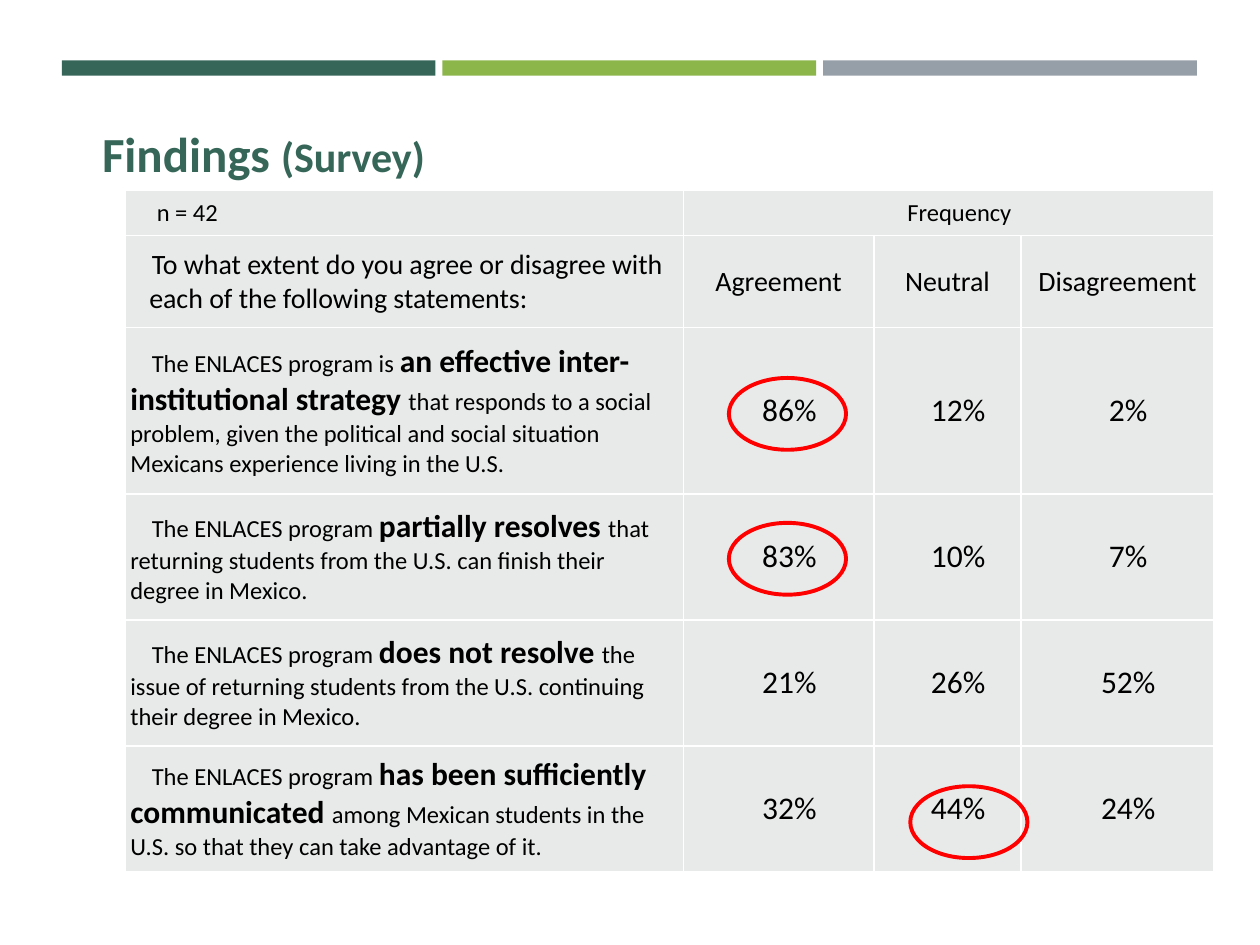
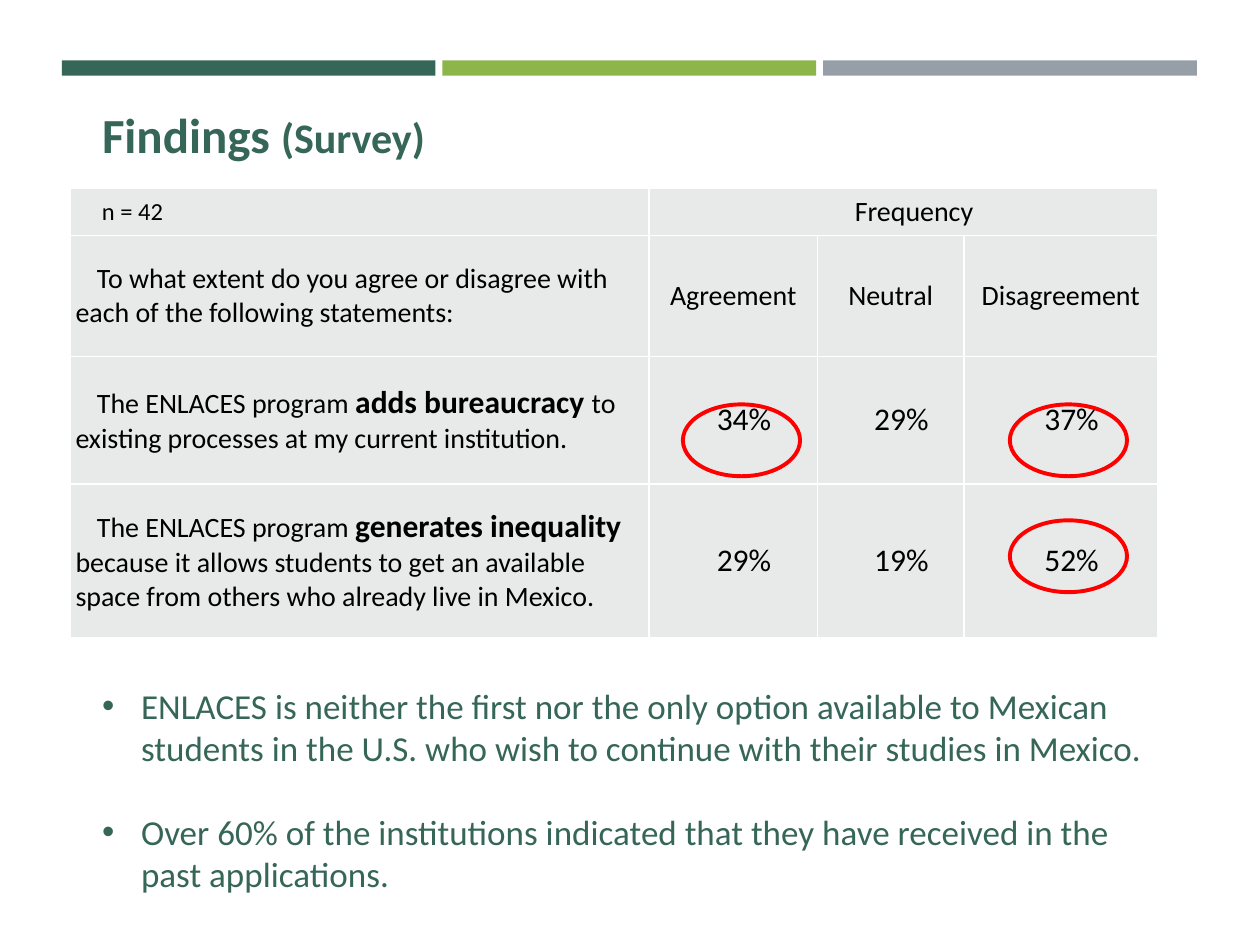
from dataclasses import dataclass

from lxml.etree import SubElement
from pptx import Presentation
from pptx.dml.color import RGBColor
from pptx.enum.shapes import MSO_SHAPE
from pptx.enum.text import MSO_ANCHOR, MSO_AUTO_SIZE, PP_ALIGN
from pptx.oxml.ns import qn
from pptx.util import Inches, Pt

GREEN = RGBColor(0x36, 0x66, 0x58)
LIME = RGBColor(0x8C, 0xB6, 0x4A)
SLATE = RGBColor(0x96, 0x9F, 0xA7)
CELL_GREY = RGBColor(0xE8, 0xEA, 0xEA)
BLACK = RGBColor(0, 0, 0)
WHITE = RGBColor(0xFF, 0xFF, 0xFF)
RED = RGBColor(0xFF, 0, 0)
FONT = "Calibri"

# The slide is a grid of 100 columns by 75 rows of square units
COLUMNS, ROWS = 100, 75
FIRST_INDENT = 1.7
MARK_WIDTH, MARK_HEIGHT = 9.3, 5.7

QUESTION = "To what extent do you agree or disagree with each of the following statements:"
ANSWERS = ["Agreement", "Neutral", "Disagreement"]


@dataclass
class Box:
    left: float
    top: float
    width: float
    height: float


@dataclass
class Survey:
    left: float
    top: float
    widths: list
    heights: list
    frequency_size: int
    question_indent: tuple  # left margin, first line
    statement_size: int
    statements: list  # lead, emphasis, rest, percentages
    marks: list  # row, column, shift right, shift down


def units(count):
    return Inches(count / 10)


def place(shape, box):
    shape.left, shape.top = units(box.left), units(box.top)
    shape.width, shape.height = units(box.width), units(box.height)


def add_run(paragraph, text, size, color=BLACK, bold=False):
    run = paragraph.add_run()
    run.text = text
    run.font.name = FONT
    run.font.size = Pt(size)
    run.font.bold = bold
    run.font.color.rgb = color


def indent(paragraph, margin, first):
    properties = paragraph._p.get_or_add_pPr()
    properties.set("marL", str(units(margin)))
    properties.set("indent", str(units(first)))
    return properties


def add_preset(slide, preset, box):
    shape = slide.shapes.add_shape(
        preset, units(box.left), units(box.top), units(box.width), units(box.height))
    shape.shadow.inherit = False
    return shape


def add_bands(prs, slide, box, gap):
    """Three equal bands, moved to the master so every slide shows them."""
    colors = [GREEN, LIME, SLATE]
    width = (box.width - gap * (len(colors) - 1)) / len(colors)
    for i, color in enumerate(colors):
        band = add_preset(slide, MSO_SHAPE.RECTANGLE,
                          Box(box.left + i * (width + gap), box.top, width, box.height))
        band.fill.solid()
        band.fill.fore_color.rgb = color
        band.line.fill.background()
        prs.slide_master.shapes.element.append(band.element)


def add_title(slide, box):
    title = slide.shapes.title
    place(title, box)
    frame = title.text_frame
    frame.word_wrap = True
    frame.auto_size = MSO_AUTO_SIZE.NONE
    frame.vertical_anchor = MSO_ANCHOR.TOP
    heading = frame.paragraphs[0]
    heading.alignment = PP_ALIGN.LEFT
    heading.line_spacing = Pt(33.6)
    add_run(heading, "Findings ", 28, GREEN, True)
    add_run(heading, "(Survey)", 24, GREEN, True)


def style_cell(cell):
    cell.margin_left = cell.margin_right = units(0.4)
    cell.margin_top = cell.margin_bottom = units(0.4)
    cell.vertical_anchor = MSO_ANCHOR.MIDDLE
    properties = cell._tc.get_or_add_tcPr()
    for side in ("lnL", "lnR", "lnT", "lnB"):
        border = SubElement(properties, qn(f"a:{side}"), w=str(Pt(1)))
        fill = SubElement(border, qn("a:solidFill"))
        SubElement(fill, qn("a:srgbClr"), val=str(WHITE))
    cell.fill.solid()
    cell.fill.fore_color.rgb = CELL_GREY


def write_cell(cell, runs, margin=0, first=FIRST_INDENT, centred=False):
    """Each run is (text, size) or (text, size, bold)."""
    paragraph = cell.text_frame.paragraphs[0]
    indent(paragraph, margin, first)
    paragraph.alignment = PP_ALIGN.CENTER if centred else PP_ALIGN.LEFT
    for text, size, *bold in runs:
        add_run(paragraph, text, size, bold=any(bold))


def add_survey(slide, survey):
    box = Box(survey.left, survey.top, sum(survey.widths), sum(survey.heights))
    table = slide.shapes.add_table(
        len(survey.heights), len(survey.widths), units(box.left), units(box.top),
        units(box.width), units(box.height)).table
    table.first_row = table.horz_banding = False
    for column, width in zip(table.columns, survey.widths):
        column.width = units(width)
    for row, height in zip(table.rows, survey.heights):
        row.height = units(height)
    for cell in table.iter_cells():
        style_cell(cell)

    # Sample size and answer headings
    table.cell(0, 1).merge(table.cell(0, 3))
    write_cell(table.cell(0, 0), [("n = 42", 14)], first=2.1)
    write_cell(table.cell(0, 1), [("Frequency", survey.frequency_size)], centred=True)
    write_cell(table.cell(1, 0), [(QUESTION, 16)], *survey.question_indent)
    for column, answer in enumerate(ANSWERS, 1):
        write_cell(table.cell(1, column), [(answer, 16)], first=0, centred=True)

    # Statements with their percentages
    size = survey.statement_size
    for row, (lead, emphasis, rest, shares) in enumerate(survey.statements, 2):
        write_cell(table.cell(row, 0), [(lead, size), (emphasis, 18, True), (rest, size)])
        for column, share in enumerate(shares, 1):
            write_cell(table.cell(row, column), [(f"{share}%", 18)], centred=True)

    # Red rings around the key percentages
    for row, column, right, down in survey.marks:
        centre_x = box.left + sum(survey.widths[:column]) + survey.widths[column] / 2 + right
        centre_y = box.top + sum(survey.heights[:row]) + survey.heights[row] / 2 + down
        ring = add_preset(slide, MSO_SHAPE.OVAL,
                          Box(centre_x - MARK_WIDTH / 2, centre_y - MARK_HEIGHT / 2,
                              MARK_WIDTH, MARK_HEIGHT))
        ring.fill.background()
        ring.line.color.rgb = RED
        ring.line.width = Pt(2.25)


def add_conclusions(slide, box, conclusions):
    body = slide.placeholders[1]
    place(body, box)
    frame = body.text_frame
    frame.word_wrap = True
    frame.auto_size = MSO_AUTO_SIZE.NONE
    for i, conclusion in enumerate(conclusions):
        paragraph = frame.add_paragraph() if i else frame.paragraphs[0]
        paragraph.space_before = Pt(24 if i else 0)
        properties = indent(paragraph, 3.1, -3.1)
        SubElement(properties, qn("a:buFont"), typeface="Arial")
        SubElement(properties, qn("a:buChar"), char="•")
        add_run(paragraph, conclusion, 20, GREEN)


PROGRAM = "The ENLACES program "

STRATEGY = Survey(
    left=9.95, top=15.1,
    widths=[44.3, 15.1, 11.7, 15.3], heights=[3.6, 7.3, 13.2, 10, 10, 10],
    frequency_size=14, question_indent=(1.5, 0.2), statement_size=14,
    statements=[
        (PROGRAM + "is ", "an effective inter-institutional strategy ",
         "that responds to a social problem, given the political and social situation "
         "Mexicans experience living in the U.S.", (86, 12, 2)),
        (PROGRAM, "partially resolves ",
         "that returning students from the U.S. can finish their degree in Mexico.",
         (83, 10, 7)),
        (PROGRAM, "does not resolve ",
         "the issue of returning students from the U.S. continuing their degree in Mexico.",
         (21, 26, 52)),
        (PROGRAM, "has been sufficiently communicated ",
         "among Mexican students in the U.S. so that they can take advantage of it.",
         (32, 44, 24)),
    ],
    marks=[(2, 1, 0.7, 0.25), (3, 1, 0.7, 0.15), (5, 2, 1.7, 1.05)])

DRAWBACKS = Survey(
    left=5.6, top=14.9,
    widths=[45.9, 13.4, 11.6, 15.4], heights=[3.8, 9.6, 10.1, 12.2],
    frequency_size=16, question_indent=(0, FIRST_INDENT), statement_size=16,
    statements=[
        (PROGRAM, "adds bureaucracy ", "to existing processes at my current institution.",
         (34, 29, 37)),
        (PROGRAM, "generates inequality ",
         "because it allows students to get an available space from others who already "
         "live in Mexico.", (29, 19, 52)),
    ],
    marks=[(2, 3, 0.6, 1.6), (2, 1, 0.65, 1.6), (3, 3, 0.6, -0.35)])

CONCLUSIONS = [
    "ENLACES is neither the first nor the only option available to Mexican students "
    "in the U.S. who wish to continue with their studies in Mexico.",
    "Over 60% of the institutions indicated that they have received in the past applications.",
]


def main():
    prs = Presentation()
    prs.slide_width, prs.slide_height = units(COLUMNS), units(ROWS)
    title_and_content, title_only = prs.slide_layouts[1], prs.slide_layouts[5]

    # Slide 1: strategy statements
    strategy = prs.slides.add_slide(title_only)
    add_bands(prs, strategy, Box(4.9, 4.8, 90.1, 1.2), gap=0.55)
    add_title(strategy, Box(7.1, 9.3, 49.6, 5.8))
    add_survey(strategy, STRATEGY)

    # Slide 2: drawbacks and conclusions
    drawbacks = prs.slides.add_slide(title_and_content)
    add_title(drawbacks, Box(7.1, 7.8, 35.7, 5.8))
    add_survey(drawbacks, DRAWBACKS)
    add_conclusions(drawbacks, Box(7.1, 53.8, 85.8, 17.8), CONCLUSIONS)

    prs.save("out.pptx")


if __name__ == "__main__":
    main()
